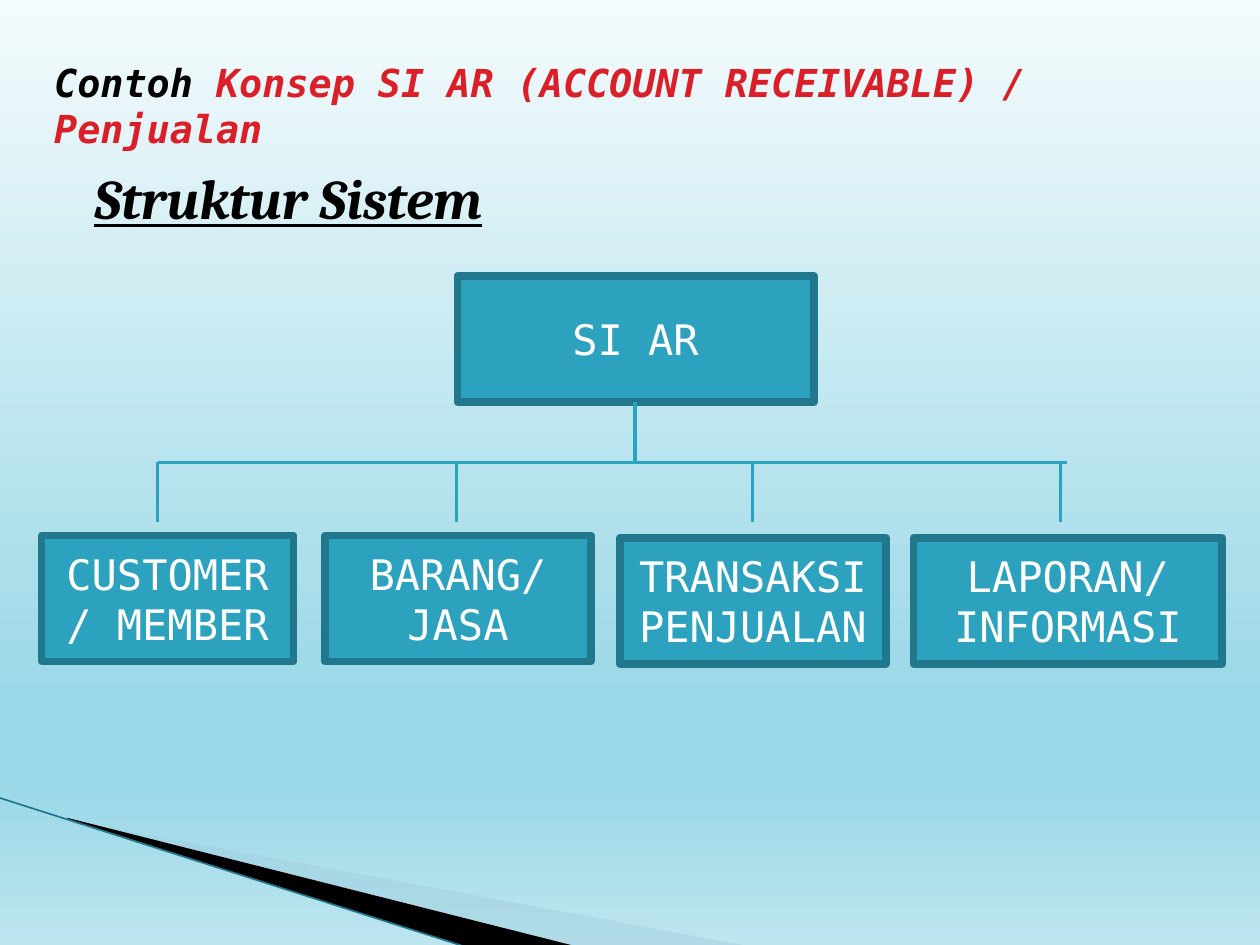
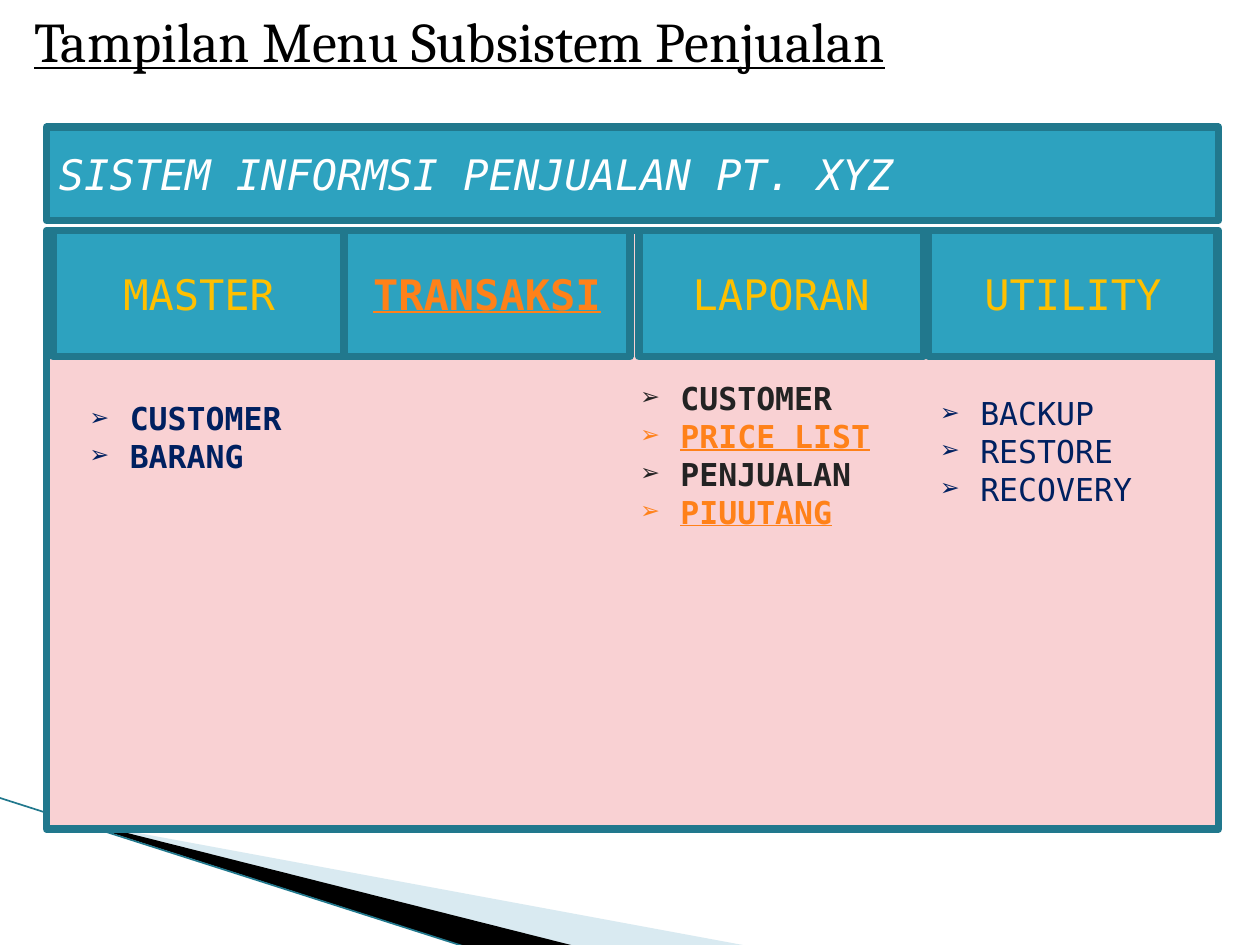
from lxml import etree
from pptx import Presentation
from pptx.dml.color import RGBColor
from pptx.enum.shapes import MSO_CONNECTOR, MSO_SHAPE
from pptx.enum.text import MSO_ANCHOR, MSO_AUTO_SIZE, PP_ALIGN
from pptx.oxml.ns import qn
from pptx.util import Inches, Pt

STRAIGHT = MSO_CONNECTOR.STRAIGHT
RECTANGLE = MSO_SHAPE.RECTANGLE
TOP, MIDDLE = MSO_ANCHOR.TOP, MSO_ANCHOR.MIDDLE
LEFT, CENTER = PP_ALIGN.LEFT, PP_ALIGN.CENTER
NO_AUTOFIT = MSO_AUTO_SIZE.NONE

SERIF = "Cambria"
MONO = "DejaVu Sans Mono"

BLACK = RGBColor(0x00, 0x00, 0x00)
WHITE = RGBColor(0xFF, 0xFF, 0xFF)
RED = RGBColor(0xDA, 0x1F, 0x28)
TEAL = RGBColor(0x2D, 0xA2, 0xBF)
DARK_TEAL = RGBColor(0x21, 0x78, 0x8D)
PALE_BLUE = RGBColor(0xA0, 0xCB, 0xDC)
PINK = RGBColor(0xF9, 0xD1, 0xD3)
YELLOW = RGBColor(0xFF, 0xC0, 0x00)
ORANGE = RGBColor(0xFF, 0x81, 0x19)
NAVY = RGBColor(0x00, 0x20, 0x60)
CHARCOAL = RGBColor(0x23, 0x23, 0x23)
SKY_STOPS = [(0, "F4FBFC"), (74, "9BD8E7"), (83, "9BD8E7"), (100, "BCE5EF")]


def write(paragraph, text, size, color, font=MONO, bold=False, italic=False, underline=False):
    """Add text as runs, with a line break at each newline."""
    for number, line in enumerate(text.split("\n")):
        if number:
            paragraph.add_line_break()
        run = paragraph.add_run()
        run.text = line
        run.font.name = font
        run.font.size = Pt(size)
        run.font.color.rgb = color
        run.font.bold = bold
        run.font.italic = italic
        run.font.underline = underline


def add_box(slide, left, top, width, height, fill=TEAL, align=CENTER):
    """Add an outlined rectangle and return its first paragraph."""
    box = slide.shapes.add_shape(RECTANGLE, Inches(left), Inches(top), Inches(width), Inches(height))
    box.shadow.inherit = False
    box.fill.solid()
    box.fill.fore_color.rgb = fill
    box.line.color.rgb = DARK_TEAL
    box.line.width = Pt(4.33)
    box.text_frame.word_wrap = True
    box.text_frame.vertical_anchor = MIDDLE
    paragraph = box.text_frame.paragraphs[0]
    paragraph.alignment = align
    return paragraph


prs = Presentation()
prs.slide_width, prs.slide_height = Inches(10), Inches(7.5)
structure = prs.slides.add_slide(prs.slide_layouts.get_by_name("Title Only"))
menu = prs.slides.add_slide(prs.slide_layouts.get_by_name("Comparison"))

# Corner wedges, shared by every slide through the master
wedges = [
    (PALE_BLUE, [(0.55, 6.51), (5.95, 7.51), (4.56, 7.51), (0.55, 6.5)]),
    (BLACK, [(0.53, 6.49), (4.57, 7.51), (3.72, 7.52), (0.54, 6.5)]),
]
corner = []
for color, points in wedges:
    outline = [(Inches(x), Inches(y)) for x, y in points]
    builder = structure.shapes.build_freeform(*outline[0])
    builder.add_line_segments(outline[1:])
    wedge = builder.convert_to_shape()
    wedge.shadow.inherit = False
    wedge.fill.solid()
    wedge.fill.fore_color.rgb = color
    wedge.line.fill.background()
    corner.append(wedge)
pale_color = next(corner[0]._element.spPr.iter(qn("a:srgbClr")))
etree.SubElement(pale_color, qn("a:alpha"), val="40000")

edge = structure.shapes.add_connector(STRAIGHT, Inches(-0.01), Inches(6.33), Inches(3.71), Inches(7.52))
edge.line.color.rgb = DARK_TEAL
edge.line.width = Pt(0.95)
etree.SubElement(edge._element.spPr, qn("a:effectLst"))
corner.append(edge)

for number, part in enumerate(corner, start=20):
    next(part._element.iter(qn("p:cNvPr"))).set("id", str(number))
    prs.slide_master.shapes._spTree.append(part._element)

# Titles
titles = [
    (structure, (0.33, 0.42, 9.36, 0.47), [
        ("Contoh ", 22, BLACK, MONO, True, True),
        ("Konsep SI AR (ACCOUNT RECEIVABLE) / Penjualan", 22, RED, MONO, True, True),
    ]),
    (menu, (0.17, 0, 8, 1.18), [
        ("Tampilan Menu Subsistem Penjualan", 32, BLACK, SERIF, False, False, True),
    ]),
]
for slide, place, parts in titles:
    title = slide.shapes.title
    title.left, title.top, title.width, title.height = map(Inches, place)
    title.text_frame.auto_size = NO_AUTOFIT
    title.text_frame.word_wrap = True
    title.text_frame.vertical_anchor = TOP
    heading = title.text_frame.paragraphs[0]
    heading.alignment = LEFT
    for part in parts:
        write(heading, *part)

# Slide 1: system structure
sky = structure.background.fill
sky.gradient()
sky.gradient_angle = 270
stop_list = next(structure._element.iter(qn("a:gsLst")))
for stop in list(stop_list):
    stop_list.remove(stop)
for percent, color in SKY_STOPS:
    stop = etree.SubElement(stop_list, qn("a:gs"), pos=str(percent * 1000))
    etree.SubElement(stop, qn("a:srgbClr"), val=color)

subtitle = structure.shapes.add_textbox(Inches(0.65), Inches(1.25), Inches(7.77), Inches(0.64))
subtitle.text_frame.word_wrap = True
write(subtitle.text_frame.paragraphs[0], "Struktur Sistem", 32, BLACK, SERIF, True, True, True)

modules = [
    ("SI AR", 3.63, 2.19, 2.83),
    ("CUSTOMER/ MEMBER", 0.33, 4.25, 2),
    ("BARANG/ JASA", 2.58, 4.25, 2.11),
    ("TRANSAKSI\nPENJUALAN", 4.92, 4.27, 2.11),
    ("LAPORAN/ INFORMASI", 7.25, 4.27, 2.45),
]
for name, left, top, width in modules:
    write(add_box(structure, left, top, width, 1), name, 24, WHITE)

BUS_Y = 3.67
branches = [(5.04, 3.19, 5.04, BUS_Y), (1.25, BUS_Y, 8.47, BUS_Y)]
branches += [(x, BUS_Y, x, 4.14) for x in (1.25, 3.62, 5.97, 8.42)]
for ends in branches:
    branch = structure.shapes.add_connector(STRAIGHT, *map(Inches, ends))
    branch.line.color.rgb = TEAL
    branch.line.width = Pt(1.75)
    etree.SubElement(branch._element.spPr, qn("a:effectLst"))

# Slide 2: menu of the sales subsystem
menu.background.fill.solid()
menu.background.fill.fore_color.rgb = WHITE
add_box(menu, 0.37, 1.83, 9.3, 4.75, fill=PINK)

tabs = [
    ("MASTER", 0.42, 2.32, YELLOW, False),
    ("TRANSAKSI", 2.73, 2.27, ORANGE, True),
    ("UTILITY", 7.37, 2.29, YELLOW, False),
    ("LAPORAN", 5.07, 2.26, YELLOW, False),
]
for name, left, width, color, active in tabs:
    write(add_box(menu, left, 1.83, width, 1), name, 24, color, bold=active, underline=active)

banner = add_box(menu, 0.37, 1.01, 9.3, 0.74, align=LEFT)
write(banner, "SISTEM INFORMSI PENJUALAN PT. XYZ", 24, WHITE, italic=True)

submenus = [
    ((0.62, 3.12, 2.11, 0.71), True, [("CUSTOMER", NAVY), ("BARANG", NAVY)]),
    ((4.99, 2.96, 2.18, 1.31), True, [("CUSTOMER", CHARCOAL), ("PRICE LIST", ORANGE),
                                      ("PENJUALAN", CHARCOAL), ("PIUUTANG", ORANGE)]),
    ((7.37, 3.08, 2.13, 1.01), False, [("BACKUP", NAVY), ("RESTORE", NAVY), ("RECOVERY", NAVY)]),
]
bodies = [holder for holder in menu.placeholders if holder.placeholder_format.idx in (1, 2, 3, 4)]
for body, (place, bold, items) in zip(bodies, submenus):
    menu.shapes._spTree.append(body._element)  # in front of the pink panel
    body.left, body.top, body.width, body.height = map(Inches, place)
    frame = body.text_frame
    frame.auto_size = NO_AUTOFIT
    frame.word_wrap = True
    frame.vertical_anchor = TOP
    for number, (item, color) in enumerate(items):
        entry = frame.add_paragraph() if number else frame.paragraphs[0]
        properties = entry._p.get_or_add_pPr()
        properties.set("marL", str(Inches(0.31)))
        properties.set("indent", str(-Inches(0.31)))
        etree.SubElement(properties, qn("a:buFont"), typeface=MONO)
        etree.SubElement(properties, qn("a:buChar"), char="➢")
        entry.space_before = Pt(0)
        write(entry, item, 18, color, bold=bold, underline=color == ORANGE)

for holder in list(menu.placeholders):
    if not holder.text_frame.text:
        holder._element.getparent().remove(holder._element)

prs.save("out.pptx")
